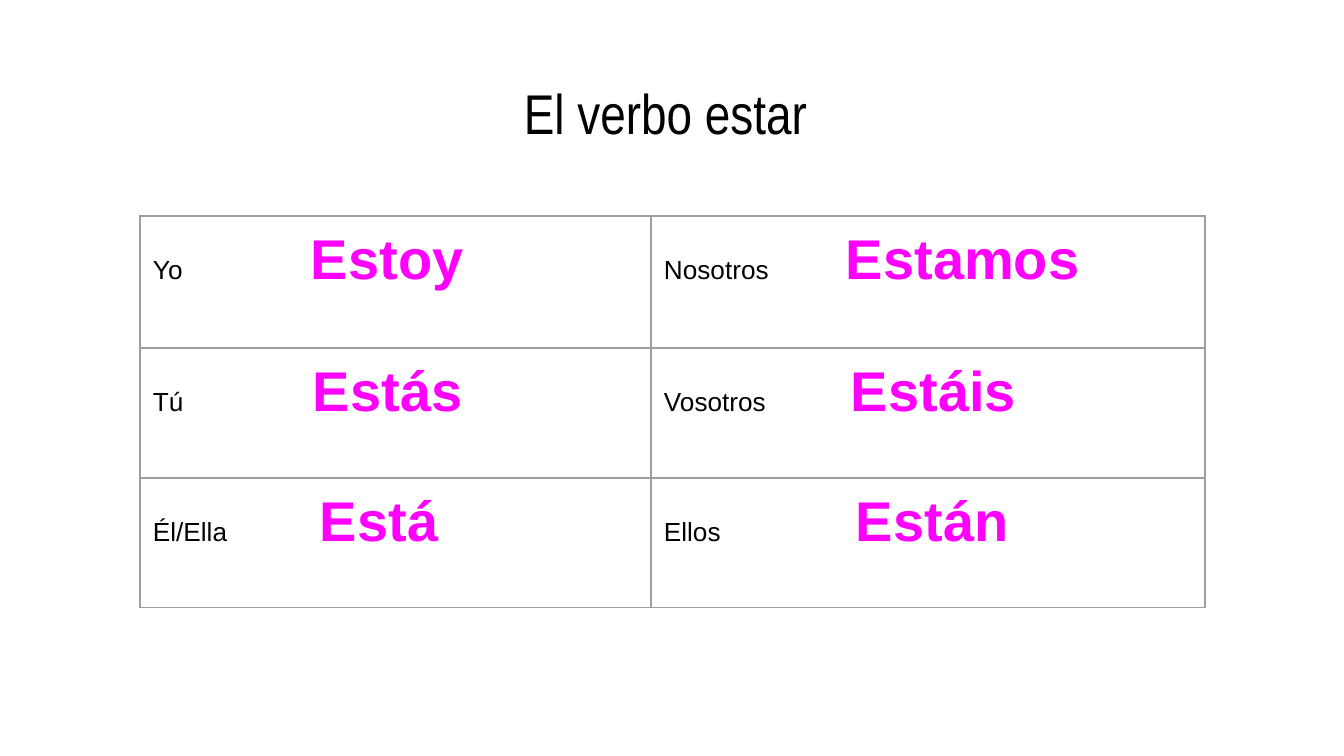
from lxml import etree
from pptx import Presentation
from pptx import util as u
from pptx.dml.color import RGBColor
from pptx.enum import text
from pptx.oxml.ns import qn

PX_PER_INCH = 134.4
INSET = 13
BLACK, MAGENTA, GREY, WHITE = "000000", "FF00FF", "9E9E9E", "FFFFFF"
COLUMNS = [511, 554]
ROWS = [132, 130, 130]
CONJUGATION = [
    [("Yo", "Estoy", 158), ("Nosotros", "Estamos", 182)],
    [("Tú", "Estás", 160), ("Vosotros", "Estáis", 187)],
    [("Él/Ella", "Está", 167), ("Ellos", "Están", 192)],
]


def px(n):
    """Convert pixels to EMU."""
    return u.Inches(n / PX_PER_INCH)


def rgb(value):
    """Turn a hex string into a colour."""
    return RGBColor.from_string(value)


def add_run(p, words, size, color, name="Arial", bold=False):
    """Append a formatted run to a paragraph."""
    r = p.add_run()
    r.text = words
    r.font.size = u.Pt(size)
    r.font.name = name
    r.font.bold = bold
    r.font.color.rgb = rgb(color)


def set_insets(obj):
    """Give a cell or text frame equal margins."""
    obj.margin_left = obj.margin_right = px(INSET)
    obj.margin_top = obj.margin_bottom = px(INSET)


def add_tab_stop(p, position):
    """Put one left tab stop on a paragraph."""
    tabs = etree.SubElement(p._p.get_or_add_pPr(), qn("a:tabLst"))
    etree.SubElement(tabs, qn("a:tab"), pos=str(px(position)), algn="l")


def set_borders(cell, color, width):
    """Draw a solid line on all four sides of a cell."""
    tcPr = cell._tc.get_or_add_tcPr()
    for i, side in enumerate(("lnL", "lnR", "lnT", "lnB")):
        ln = etree.Element(qn(f"a:{side}"), w=str(u.Pt(width)))
        fill = etree.SubElement(ln, qn("a:solidFill"))
        etree.SubElement(fill, qn("a:srgbClr"), val=color)
        tcPr.insert(i, ln)


def fill_cell(cell, pronoun, verb, tab):
    """Write a pronoun and its verb form in a cell."""
    cell.fill.solid()
    cell.fill.fore_color.rgb = rgb(WHITE)
    set_insets(cell)
    set_borders(cell, GREY, 0.75)
    p = cell.text_frame.paragraphs[0]
    add_tab_stop(p, tab)
    add_run(p, pronoun + "\t", 14, BLACK)
    add_run(p, verb, 30, MAGENTA, bold=True)


def add_title(s, words):
    """Place and format the title placeholder."""
    sp = s.shapes.title
    sp.left, sp.top, sp.width, sp.height = map(px, (46, 66, 1252, 84))
    tf = sp.text_frame
    tf.word_wrap = True
    tf.auto_size = text.MSO_AUTO_SIZE.NONE
    tf.vertical_anchor = text.MSO_ANCHOR.TOP
    set_insets(tf)
    p = tf.paragraphs[0]
    p.alignment = text.PP_ALIGN.CENTER
    add_run(p, words, 30, BLACK, name="Arial Narrow")


def add_conjugation(s):
    """Add the table of verb forms."""
    frame = s.shapes.add_table(len(ROWS), len(COLUMNS), px(140), px(216),
                               px(sum(COLUMNS)), px(sum(ROWS)))
    table = frame.table
    table.first_row = table.horz_banding = False
    for column, width in zip(table.columns, COLUMNS):
        column.width = px(width)
    for row, height, entries in zip(table.rows, ROWS, CONJUGATION):
        row.height = px(height)
        for cell, entry in zip(row.cells, entries):
            fill_cell(cell, *entry)


def main():
    """Build and save the slide."""
    prs = Presentation()
    prs.slide_width, prs.slide_height = px(1344), px(756)
    s = prs.slides.add_slide(prs.slide_layouts[5])
    add_title(s, "El verbo estar ")
    add_conjugation(s)
    prs.save("out.pptx")


if __name__ == "__main__":
    main()
